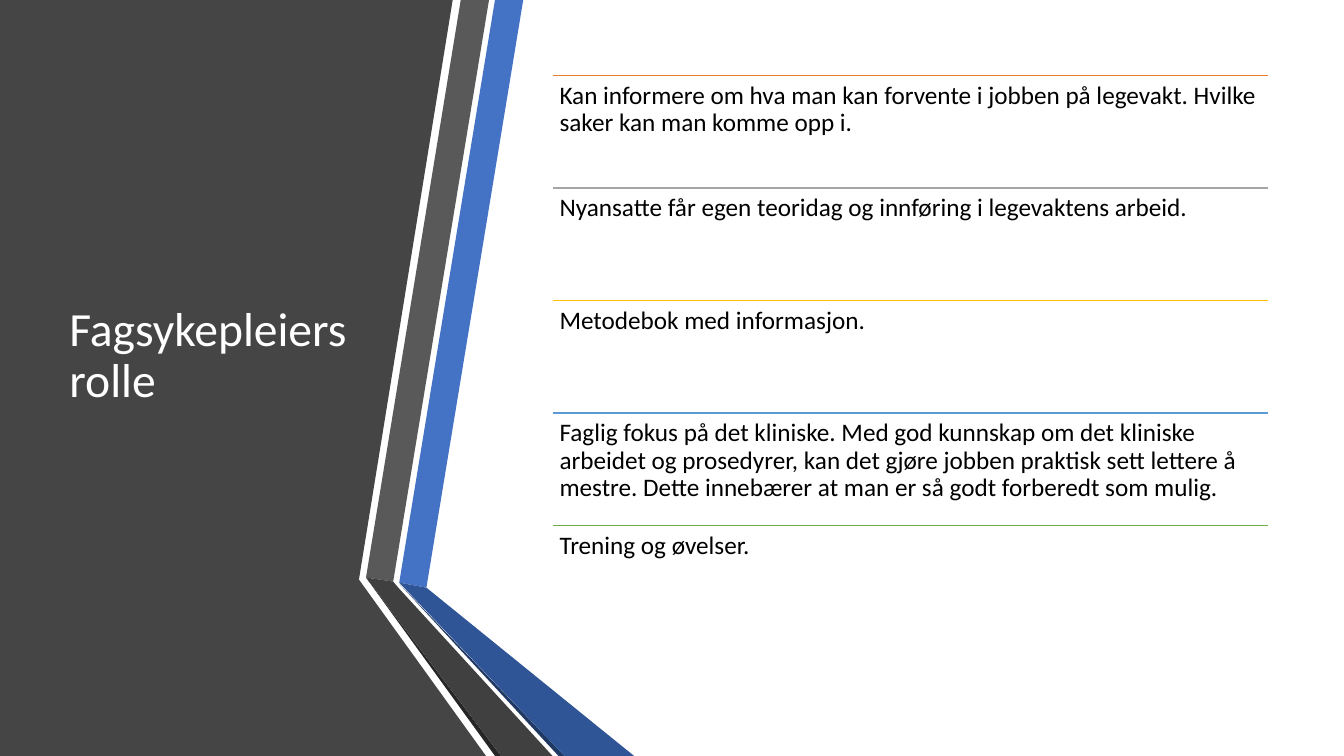
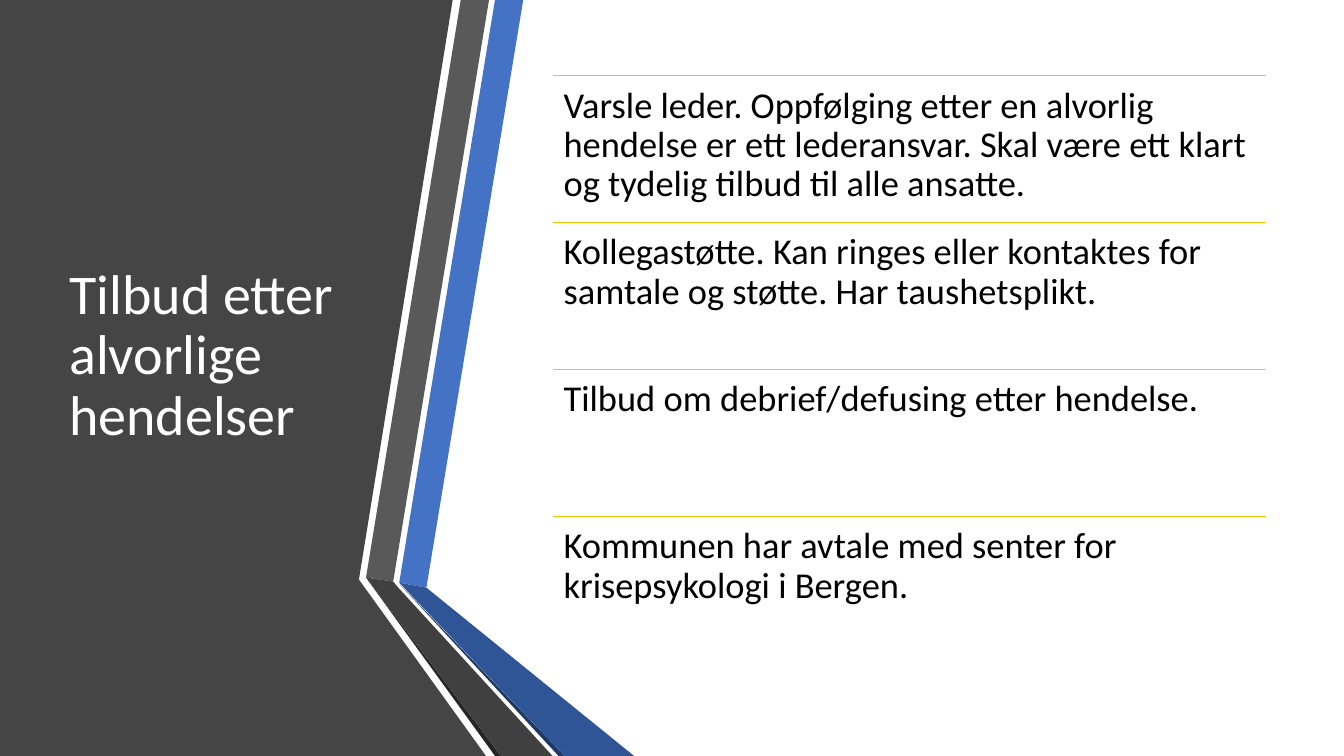
from dataclasses import dataclass

from lxml.etree import SubElement
from pptx import Presentation
from pptx.dml.color import RGBColor
from pptx.enum.shapes import MSO_CONNECTOR
from pptx.enum.text import MSO_ANCHOR
from pptx.oxml.ns import qn
from pptx.util import Inches, Pt


@dataclass(frozen=True)
class Theme:
    font: str = "Calibri"
    white: str = "FFFFFF"
    black: str = "000000"
    panel: str = "454545"
    blue: str = "4472C4"
    blue_dark: str = "2F5597"
    blue_edge: str = "203864"
    gray: str = "595959"
    gray_dark: str = "404040"
    gray_edge: str = "262626"
    orange: str = "ED7D31"
    silver: str = "A5A5A5"
    gold: str = "FFC000"
    sky: str = "5B9BD5"
    green: str = "70AD47"
    rule_width: float = 1
    line_spacing: float = 0.9


THEME = Theme()

# Outlines in inches, from back to front
RIBBON = [
    (THEME.panel, [(0, 0), (4.49, 0), (3.56, 5.75), (4.82, 7.5), (0, 7.5)]),
    (THEME.blue, [(3.96, 5.78), (4.23, 5.83), (5.19, 0), (4.91, 0)]),
    (THEME.gray, [(4.85, 0), (4.57, 0), (3.63, 5.73), (3.9, 5.77)]),
    (THEME.gray_edge, [(3.63, 5.73), (4.91, 7.5), (4.97, 7.5)]),
    (THEME.blue_edge, [(3.96, 5.79), (5.54, 7.5), (5.6, 7.5)]),
    (THEME.blue_dark, [(3.96, 5.78), (5.6, 7.5), (6.29, 7.5), (4.23, 5.83)]),
    (THEME.gray_dark, [(5.48, 7.5), (3.95, 5.83), (3.9, 5.77),
                       (3.63, 5.73), (4.97, 7.5)]),
]

TITLE_BOX = (0.59, 0.75, 3.04, 5.58)
LIST_LEFT, LIST_TOP = 5.48, 0.75

SLIDES = [
    {
        "title": "Fagsykepleiers rolle",
        "title_size": 34,
        "text_size": 18,
        "inset": 0.07,
        "list_size": (7.1, 5.58),
        "rules": [THEME.orange, THEME.silver, THEME.gold, THEME.sky, THEME.green],
        "items": [
            "Kan informere om hva man kan forvente i jobben på legevakt. "
            "Hvilke saker kan man komme opp i.",
            "Nyansatte får egen teoridag og innføring i legevaktens arbeid.",
            "Metodebok med informasjon.",
            "Faglig fokus på det kliniske. Med god kunnskap om det kliniske "
            "arbeidet og prosedyrer, kan det gjøre jobben praktisk sett lettere "
            "å mestre. Dette innebærer at man er så godt forberedt som mulig.",
            "Trening og øvelser.",
        ],
    },
    {
        "title": "Tilbud etter alvorlige hendelser",
        "title_size": 40,
        "text_size": 26,
        "inset": 0.11,
        "list_size": (7.08, 5.83),
        "rules": [THEME.gold] * 4,
        "items": [
            "Varsle leder. Oppfølging etter en alvorlig hendelse er ett "
            "lederansvar. Skal være ett klart og tydelig tilbud til alle ansatte.",
            "Kollegastøtte. Kan ringes eller kontaktes for samtale og støtte. "
            "Har taushetsplikt.",
            "Tilbud om debrief/defusing etter hendelse.",
            "Kommunen har avtale med senter for krisepsykologi i Bergen.",
        ],
    },
]


def add_ribbon(s):
    """Draw the dark title panel and the folded bands beside it."""
    for color, outline in RIBBON:
        points = [(Inches(x), Inches(y)) for x, y in outline]
        builder = s.shapes.build_freeform(*points[0])
        builder.add_line_segments(points[1:], close=True)
        sp = builder.convert_to_shape()
        sp.shadow.inherit = False
        sp.fill.solid()
        sp.fill.fore_color.rgb = RGBColor.from_string(color)
        sp.line.fill.background()


def add_text(s, box, text, size, color, inset=None, anchor=MSO_ANCHOR.TOP):
    sp = s.shapes.add_textbox(*map(Inches, box))
    tf = sp.text_frame
    tf.word_wrap = True
    tf.vertical_anchor = anchor
    if inset is not None:
        tf.margin_left = tf.margin_right = Inches(inset)
        tf.margin_top = tf.margin_bottom = Inches(inset)
    tf.text = text
    p = tf.paragraphs[0]
    p.line_spacing = THEME.line_spacing
    font = p.runs[0].font
    font.name = THEME.font
    font.size = Pt(size)
    font.color.rgb = RGBColor.from_string(color)


def add_rule(s, left, top, width, color):
    line = s.shapes.add_connector(
        MSO_CONNECTOR.STRAIGHT,
        Inches(left), Inches(top), Inches(left + width), Inches(top))
    line.line.color.rgb = RGBColor.from_string(color)
    line.line.width = Pt(THEME.rule_width)
    SubElement(line._element.spPr, qn("a:effectLst"))


def add_ruled_list(s, content):
    """Stack the items in equal rows, each under a coloured rule."""
    width, height = content["list_size"]
    row_height = height / len(content["items"])
    for i, (item, color) in enumerate(zip(content["items"], content["rules"])):
        top = LIST_TOP + i * row_height
        add_rule(s, LIST_LEFT, top, width, color)
        add_text(s, (LIST_LEFT, top, width, row_height), item,
                 content["text_size"], THEME.black, content["inset"])


def main():
    prs = Presentation()
    prs.slide_width, prs.slide_height = Inches(13.33), Inches(7.5)
    for content in SLIDES:
        s = prs.slides.add_slide(prs.slide_layouts[6])
        add_ribbon(s)
        add_text(s, TITLE_BOX, content["title"], content["title_size"],
                 THEME.white, anchor=MSO_ANCHOR.MIDDLE)
        add_ruled_list(s, content)
    prs.save("out.pptx")


if __name__ == "__main__":
    main()
